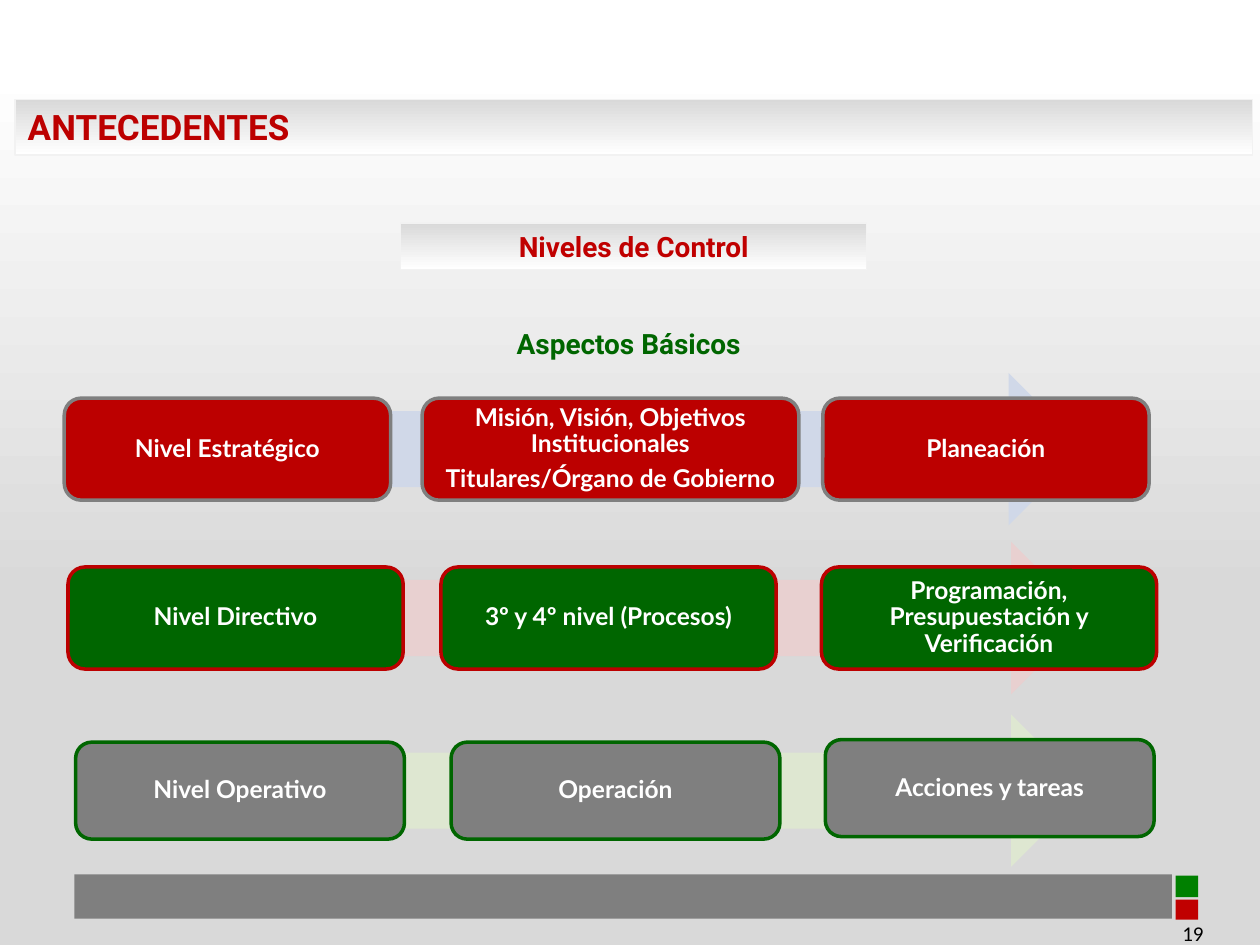
from pptx import Presentation
from pptx.dml.color import RGBColor
from pptx.enum.shapes import MSO_SHAPE
from pptx.enum.text import MSO_ANCHOR, PP_ALIGN
from pptx.util import Inches, Pt

COLORS = {
    "white": "FFFFFF", "black": "000000", "silver": "D9D9D9", "edge": "F2F2F2",
    "gray": "7F7F7F", "red": "BC0000", "deep_red": "C00000", "green": "006600",
    "bright_green": "008000", "blue_tint": "D0D8E8", "red_tint": "E8D0D0",
    "green_tint": "DEE7D1",
}

# Arrow box, arrow tint, card fill, card line, card height,
# then for each card: left offset from the arrow, width, paragraphs, rise
LEVELS = [
    ((1.17, 2.96, 7.44, 1.21), "blue_tint", "red", "gray", 0.81, [
        (-0.66, 2.59, ["Nivel Estratégico"], 0),
        (2.18, 2.99, ["Misión, Visión, Objetivos Institucionales",
                      "Titulares/Órgano de Gobierno"], 0),
        (5.36, 2.59, ["Planeación"], 0),
    ]),
    ((1.19, 4.3, 7.44, 1.21), "red_tint", "green", "red", 0.81, [
        (-0.65, 2.66, ["Nivel Directivo"], 0),
        (2.31, 2.66, ["3º y 4º nivel (Procesos)"], 0),
        (5.33, 2.66, ["Programación, Presupuestación y Verificación"], 0),
    ]),
    ((1.25, 5.67, 7.38, 1.21), "green_tint", "gray", "green", 0.77, [
        (-0.65, 2.61, ["Nivel Operativo"], 0),
        (2.33, 2.61, ["Operación"], 0),
        (5.3, 2.61, ["Acciones y tareas"], 0.02),
    ]),
]


def rgb(name):
    return RGBColor.from_string(COLORS[name])


def place(shape, box):
    shape.left, shape.top, shape.width, shape.height = map(Inches, box)


def write(shape, *texts, size=14, font="Lato", color="white", bold=True,
          align=PP_ALIGN.CENTER, anchor=MSO_ANCHOR.MIDDLE, spacing=1.0,
          after=0, margins=(0.1, 0.05)):
    frame = shape.text_frame
    frame.word_wrap = True
    frame.vertical_anchor = anchor
    frame.margin_left = frame.margin_right = Inches(margins[0])
    frame.margin_top = frame.margin_bottom = Inches(margins[1])
    for index, text in enumerate(texts):
        para = frame.add_paragraph() if index else frame.paragraphs[0]
        para.alignment = align
        para.line_spacing = spacing
        para.space_before = Pt(0)
        para.space_after = Pt(after)
        span = para.add_run()
        span.text = text
        span.font.size = Pt(size)
        span.font.name = font
        span.font.bold = bold
        span.font.color.rgb = rgb(color)


def fade(fill, low, high):
    """Vertical gradient; each end is a (position, colour) pair, bottom first."""
    fill.gradient()
    fill.gradient_angle = 90
    for stop, (position, color) in zip(fill.gradient_stops, (low, high)):
        stop.position = position
        stop.color.rgb = rgb(color)


def add_block(shapes, kind, box, fill, line=None):
    shape = shapes.add_shape(kind, *map(Inches, box))
    shape.shadow.inherit = False
    shape.fill.solid()
    shape.fill.fore_color.rgb = rgb(fill)
    if line:
        shape.line.color.rgb = rgb(line)
        shape.line.width = Pt(2)
    else:
        shape.line.fill.background()
    return shape


def style_banner(shape):
    fade(shape.fill, (0, "white"), (1, "silver"))
    shape.line.color.rgb = rgb("edge")
    shape.line.width = Pt(0.75)


def add_footer(page, box):
    left, top, width, height = box
    square = left + width + 0.03
    for part, fill in (
        ((square, top + 0.2, 0.18, 0.16), "deep_red"),
        ((square, top + 0.01, 0.18, 0.17), "bright_green"),
        (box, "gray"),
    ):
        add_block(page.shapes, MSO_SHAPE.RECTANGLE, part, fill)
    number = page.shapes.add_textbox(*map(Inches, (square - 1.93, top + 0.27, 2.25, 0.4)))
    write(number, "19", size=12, font="Calibri", color="black", bold=False,
          align=PP_ALIGN.RIGHT)


def add_headings(page):
    title = page.shapes.title
    place(title, (0.12, 0.79, 9.82, 0.44))
    style_banner(title)
    write(title, "ANTECEDENTES", size=20, font="Roboto", color="red",
          align=PP_ALIGN.LEFT, anchor=MSO_ANCHOR.TOP)

    banner = add_block(page.shapes, MSO_SHAPE.RECTANGLE, (3.18, 1.77, 3.7, 0.37), "white")
    style_banner(banner)
    write(banner, "Niveles de Control", size=16, font="Roboto", color="deep_red",
          anchor=MSO_ANCHOR.TOP)

    subtitle = page.shapes.add_textbox(*map(Inches, (3.57, 2.6, 2.84, 0.31)))
    write(subtitle, "Aspectos Básicos", size=16, font="Roboto", color="green",
          anchor=MSO_ANCHOR.TOP, spacing=0.8, margins=(0.09, 0.04))


def add_level(page, box, tint, fill, line, card_height, cards):
    left, top, width, height = box
    group = page.shapes.add_group_shape()
    add_block(group.shapes, MSO_SHAPE.RIGHT_ARROW, box, tint)
    card_top = top + (height - card_height) / 2
    for offset, card_width, texts, rise in cards:
        card_box = (left + offset, card_top - rise, card_width, card_height)
        card = add_block(group.shapes, MSO_SHAPE.ROUNDED_RECTANGLE, card_box, fill, line)
        write(card, *texts, spacing=0.9, after=5, margins=(0.06, 0.06))


def main():
    deck = Presentation()
    deck.slide_width, deck.slide_height = Inches(10), Inches(7.5)
    page = deck.slides.add_slide(deck.slide_layouts[5])
    fade(page.background.fill, (0.37, "silver"), (0.93, "white"))

    # Footer bar, headings, then the three control levels
    add_footer(page, (0.59, 6.94, 8.71, 0.35))
    add_headings(page)
    for level in LEVELS:
        add_level(page, *level)

    deck.save("out.pptx")


if __name__ == "__main__":
    main()
